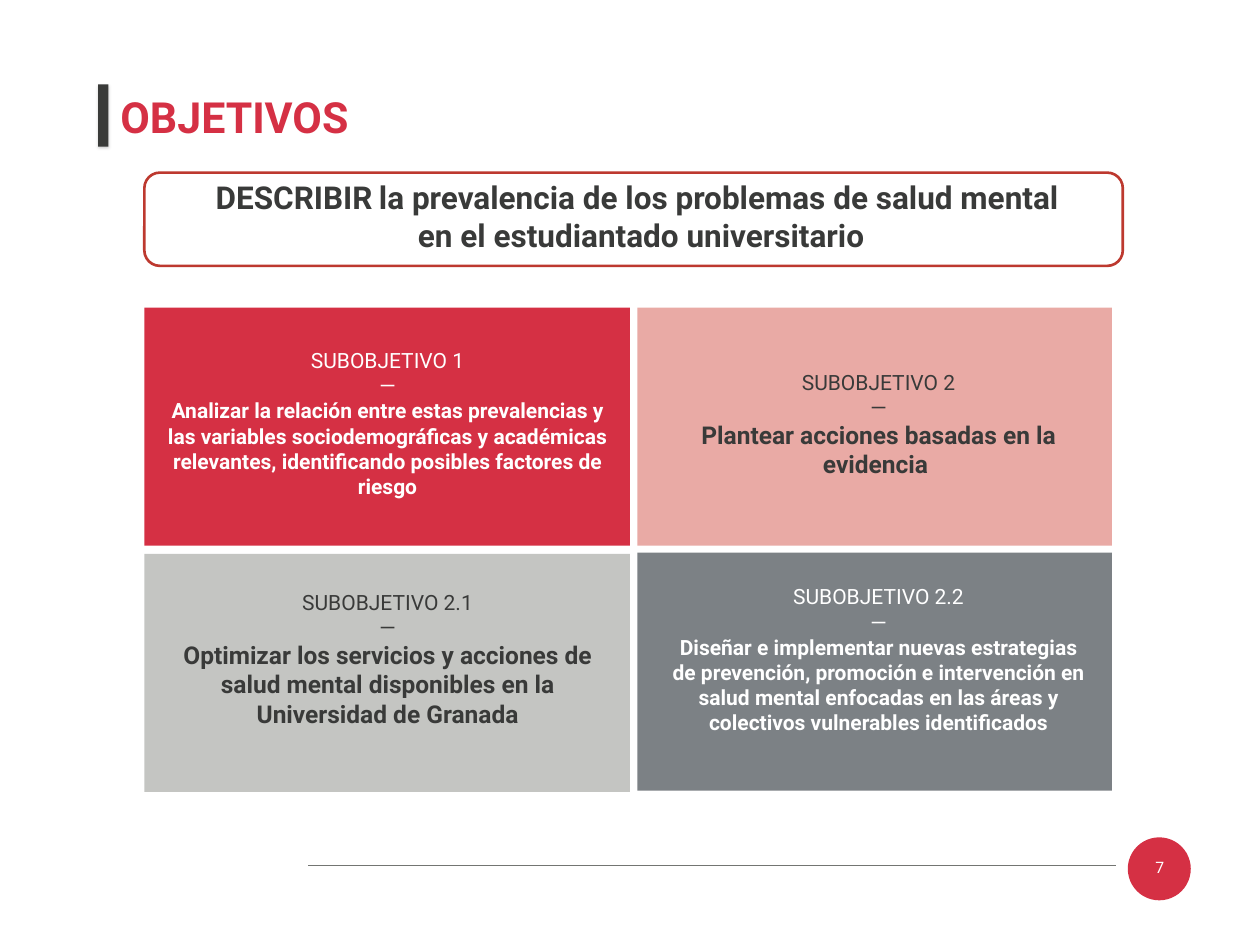
from dataclasses import dataclass

from lxml.etree import SubElement
from pptx import Presentation
from pptx.dml.color import RGBColor
from pptx.enum.shapes import MSO_CONNECTOR, MSO_SHAPE
from pptx.enum.text import MSO_ANCHOR, MSO_AUTO_SIZE, PP_ALIGN
from pptx.oxml import parse_xml
from pptx.oxml.ns import nsdecls, qn
from pptx.shapes.autoshape import Shape
from pptx.slide import Slide
from pptx.text.text import TextFrame
from pptx.util import Cm, Pt

COLORS = {
    "red": "D53044",
    "pink": "E9AAA5",
    "silver": "C4C5C2",
    "slate": "7C8185",
    "bar": "3A3B39",
    "ink": "393A39",
    "frame": "BD392F",
    "rule": "737572",
    "white": "FFFFFF",
}

SHADOW = (
    f'<a:effectLst {nsdecls("a")}><a:outerShdw blurRad="39370" dist="22860" dir="5400000" '
    'rotWithShape="0"><a:srgbClr val="808080"><a:alpha val="35000"/></a:srgbClr>'
    "</a:outerShdw></a:effectLst>"
)


@dataclass(frozen=True)
class Box:
    left: float
    top: float
    width: float
    height: float

    def lengths(self) -> tuple[Cm, Cm, Cm, Cm]:
        return Cm(self.left), Cm(self.top), Cm(self.width), Cm(self.height)


@dataclass(frozen=True)
class Card:
    box: Box
    fill: str
    text_box: Box
    heading: str
    body: str
    color: str
    body_size: int


CARDS = [
    Card(Box(5.82, 12.4, 19.58, 9.6), "red", Box(6.38, 13.89, 18.49, 6.4), "SUBOBJETIVO 1",
         "Analizar la relación entre estas prevalencias y las variables sociodemográficas y "
         "académicas relevantes, identificando posibles factores de riesgo", "white", 24),
    Card(Box(25.7, 12.4, 19.13, 9.6), "pink", Box(26.62, 14.76, 17.6, 4.7), "SUBOBJETIVO 2",
         "Plantear acciones basadas en la evidencia ", "ink", 28),
    Card(Box(5.82, 22.33, 19.58, 9.6), "silver", Box(6.38, 23.65, 18.49, 5.89), "SUBOBJETIVO 2.1",
         "Optimizar los servicios y acciones de salud mental disponibles en la "
         "Universidad de Granada", "ink", 28),
    Card(Box(25.7, 22.28, 19.13, 9.6), "slate", Box(26.72, 23.42, 17.4, 7.44), "SUBOBJETIVO 2.2",
         "Diseñar e implementar nuevas estrategias de prevención, promoción e intervención en "
         "salud mental enfocadas en las áreas y colectivos vulnerables identificados", "white", 24),
]


def rgb(name: str) -> RGBColor:
    return RGBColor.from_string(COLORS[name])


def add_text(tf: TextFrame, text: str, *, size: float, color: str, bold: bool = False,
             font: str = "Roboto", align: PP_ALIGN = PP_ALIGN.CENTER,
             same_line: bool = False) -> None:
    p = tf.paragraphs[-1]
    if p.runs and not same_line:
        p = tf.add_paragraph()
    p.alignment = align
    r = p.add_run()
    r.text = text
    r.font.name = font
    r.font.size = Pt(size)
    r.font.bold = bold
    r.font.color.rgb = rgb(color)


def add_box(s: Slide, kind: MSO_SHAPE, box: Box, fill: str = "", line: str = "") -> Shape:
    sp = s.shapes.add_shape(kind, *box.lengths())
    sp.shadow.inherit = False
    if fill:
        sp.fill.solid()
        sp.fill.fore_color.rgb = rgb(fill)
    else:
        sp.fill.background()
    if line:
        sp.line.color.rgb = rgb(line)
        sp.line.width = Pt(3)
    else:
        sp.line.fill.background()
    return sp


def add_text_box(s: Slide, box: Box) -> TextFrame:
    tf = s.shapes.add_textbox(*box.lengths()).text_frame
    tf.word_wrap = True
    return tf


def add_card(s: Slide, card: Card) -> None:
    add_box(s, MSO_SHAPE.RECTANGLE, card.box, card.fill)
    tf = add_text_box(s, card.text_box)
    for text in (card.heading, "—"):
        add_text(tf, text, size=24, color=card.color)
    add_text(tf, card.body, size=card.body_size, color=card.color, bold=True)


def add_title(s: Slide) -> None:
    title = s.shapes.title
    title.left, title.top, title.width, title.height = Box(4.6, 3.53, 42.49, 2.36).lengths()
    tf = title.text_frame
    tf.auto_size = MSO_AUTO_SIZE.NONE
    tf.vertical_anchor = MSO_ANCHOR.TOP
    add_text(tf, "OBJETIVOS", size=49, color="red", bold=True, align=PP_ALIGN.LEFT)
    bar = add_box(s, MSO_SHAPE.RECTANGLE, Box(3.96, 3.4, 0.41, 2.51), "bar")
    effects = bar.element.spPr.find(qn("a:effectLst"))
    bar.element.spPr.replace(effects, parse_xml(SHADOW))


def add_goal(s: Slide) -> None:
    add_box(s, MSO_SHAPE.ROUNDED_RECTANGLE, Box(5.82, 6.96, 39.45, 3.76), line="frame")
    tf = add_text_box(s, Box(7.04, 7.06, 37.62, 3.33))
    add_text(tf, "DESCRIBIR", size=36, color="ink", bold=True)
    add_text(tf, " ", size=32, color="ink", bold=True, font="Calibri", same_line=True)
    add_text(tf, "la prevalencia de los problemas de salud mental ", size=36, color="ink",
             bold=True, same_line=True)
    add_text(tf, "en el estudiantado universitario", size=36, color="ink", bold=True)


def add_footer(s: Slide) -> None:
    add_box(s, MSO_SHAPE.OVAL, Box(45.47, 33.76, 2.54, 2.54), "red")
    tf = add_text_box(s, Box(44.37, 33.93, 4.78, 2.03))
    tf.vertical_anchor = MSO_ANCHOR.MIDDLE
    tf.margin_left = tf.margin_right = Cm(0.69)
    tf.margin_top = tf.margin_bottom = Cm(0.33)
    add_text(tf, "7", size=18, color="white")
    rule = s.shapes.add_connector(MSO_CONNECTOR.STRAIGHT, Cm(12.42), Cm(34.87), Cm(45.01), Cm(34.87))
    rule.line.color.rgb = rgb("rule")
    rule.line.width = Pt(0.75)
    SubElement(rule.element.spPr, qn("a:effectLst"))


def main() -> None:
    prs = Presentation()
    prs.slide_width, prs.slide_height = Cm(50.8), Cm(38.1)
    s = prs.slides.add_slide(prs.slide_layouts[5])
    add_footer(s)
    add_title(s)
    add_goal(s)
    for card in CARDS:
        add_card(s, card)
    prs.save("out.pptx")


if __name__ == "__main__":
    main()
